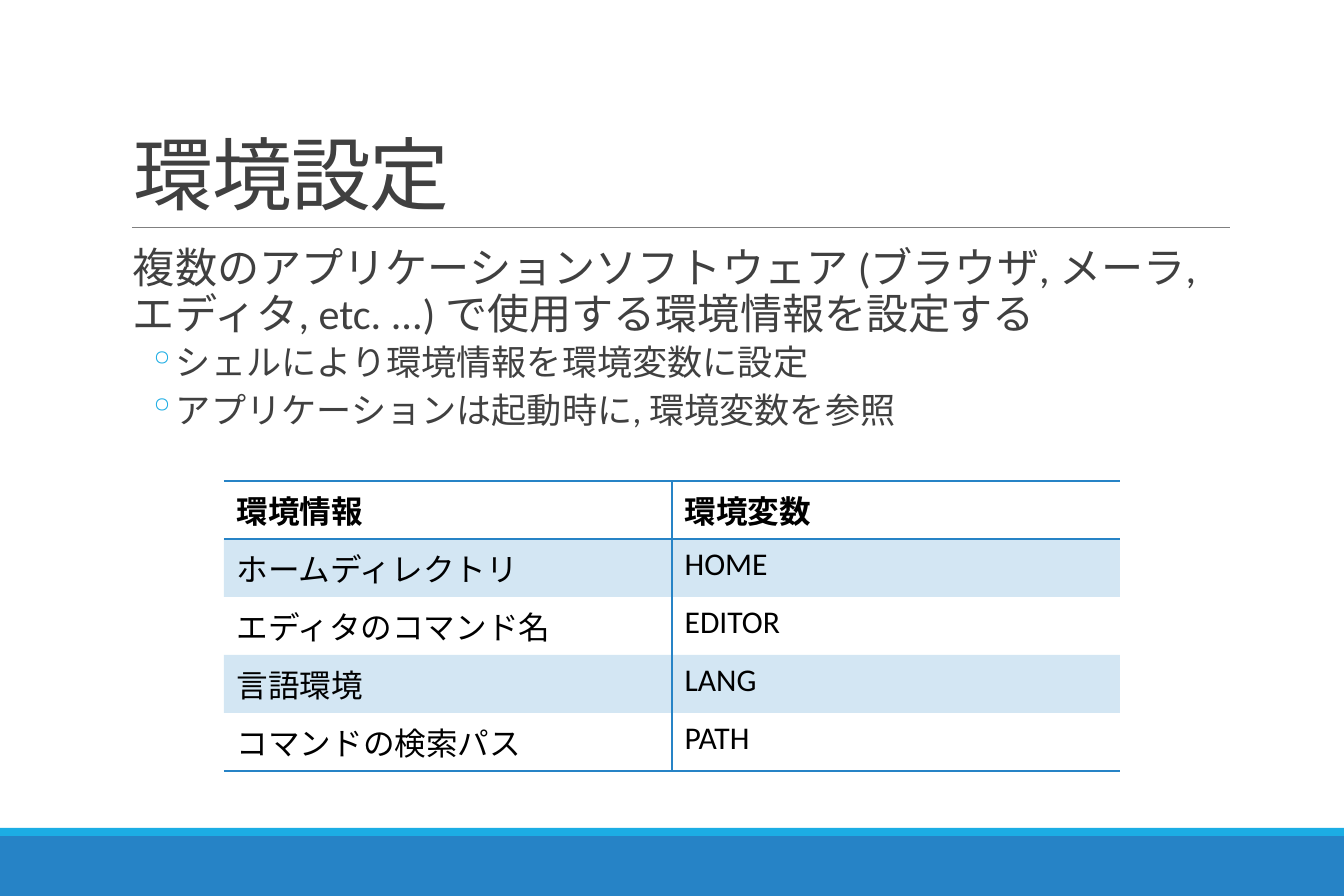
from lxml.etree import SubElement
from pptx import Presentation
from pptx.dml.color import RGBColor
from pptx.enum.lang import MSO_LANGUAGE_ID as Lang
from pptx.enum.shapes import MSO_CONNECTOR as Conn, MSO_SHAPE as Shape
from pptx.enum.text import MSO_ANCHOR as Anchor, MSO_AUTO_SIZE as Auto, PP_ALIGN as Align
from pptx.oxml.ns import qn
from pptx.util import Pt

PX = 7234  # EMU per px
WIDTH, HEIGHT = 1344, 896
FONT = "Calibri"
BLUE = RGBColor(0x26, 0x83, 0xC6)
CYAN = RGBColor(0x1C, 0xAD, 0xE4)
GRAY = RGBColor(0x80, 0x80, 0x80)
DARK = RGBColor(0x40, 0x40, 0x40)
BLACK = RGBColor(0, 0, 0)
NO_STYLE = "{2D5ABB26-0587-4C30-8999-92F81FD0307C}"

TITLE = "環境設定"
LEAD = ("複数のアプリケーションソフトウェア (ブラウザ, メーラ, エディタ, etc. ...) "
        "で使用する環境情報を設定する")
POINTS = ["シェルにより環境情報を環境変数に設定", "アプリケーションは起動時に, 環境変数を参照"]
ROWS = [
    ("環境情報", "環境変数"),
    ("ホームディレクトリ", "HOME"),
    ("エディタのコマンド名", "EDITOR"),
    ("言語環境", "LANG"),
    ("コマンドの検索パス", "PATH"),
]


def px(*nums):
    return [num * PX for num in nums]


def assign(item, values):
    for name, value in values.items():
        setattr(item, name, value)


def write(para, text, size, color, bold=False):
    run = para.add_run()
    run.text = text
    assign(run.font, {"name": FONT, "size": Pt(size), "bold": bold,
                      "language_id": Lang.JAPANESE})
    run.font.color.rgb = color
    return run


def add_bar(slide, top, height, color):
    bar = slide.shapes.add_shape(Shape.RECTANGLE, *px(0, top, WIDTH, height))
    bar.shadow.inherit = False
    bar.fill.solid()
    bar.fill.fore_color.rgb = color
    bar.line.fill.background()


def add_rule(slide, left, right, y):
    rule = slide.shapes.add_connector(Conn.STRAIGHT, *px(left, y, right, y))
    rule.line.color.rgb = GRAY
    rule.line.width = Pt(0.5)
    SubElement(rule.element.spPr, qn("a:effectLst"))


def set_title(slide, text):
    title = slide.shapes.title
    assign(title, dict(zip(("left", "top", "width", "height"), px(121, 38, 1109, 189))))
    frame = title.text_frame
    assign(frame, {"auto_size": Auto.NONE, "word_wrap": True, "vertical_anchor": Anchor.BOTTOM})
    para = frame.paragraphs[0]
    assign(para, {"alignment": Align.LEFT, "line_spacing": 0.85})
    run = write(para, text, 45.4, DARK)
    run.font._element.set("spc", "-50")


def indent(para, left, first=0, mark=None):
    props = para._p.get_or_add_pPr()
    props.set("marL", str(left * PX))
    props.set("indent", str(first * PX))
    if mark:
        tint = SubElement(props, qn("a:buClr"))
        SubElement(tint, qn("a:srgbClr"), val=str(CYAN))
        SubElement(props, qn("a:buChar"), char=mark)


def add_body(slide):
    box = slide.shapes.add_textbox(*px(121, 241, 1109, 526))
    frame = box.text_frame
    assign(frame, {"word_wrap": True, "margin_left": 0, "margin_right": 0})
    lead = frame.paragraphs[0]
    indent(lead, 12)
    assign(lead, {"line_spacing": 0.9, "space_after": Pt(1.9)})
    write(lead, LEAD, 24, DARK)
    for text in POINTS:
        para = frame.add_paragraph()
        indent(para, 51, -24, "◦")
        assign(para, {"level": 1, "line_spacing": 0.9,
                      "space_before": Pt(1.9), "space_after": Pt(3.8)})
        write(para, text, 20, DARK)


def add_edges(cell, sides):
    props = cell._tc.get_or_add_tcPr()
    for side in sides:
        edge = SubElement(props, qn("a:ln" + side), w=str(Pt(1)))
        fill = SubElement(edge, qn("a:solidFill"))
        SubElement(fill, qn("a:srgbClr"), val=str(BLUE))


def set_fill(cell, banded):
    if not banded:
        cell.fill.background()
        return
    cell.fill.solid()
    cell.fill.fore_color.rgb = BLUE
    tint = cell._tc.tcPr.find(".//" + qn("a:solidFill") + "/" + qn("a:srgbClr") + "[last()]")
    for tint in cell._tc.tcPr.findall(qn("a:solidFill") + "/" + qn("a:srgbClr")):
        SubElement(tint, qn("a:alpha"), val="20000")


def add_grid(slide):
    count = len(ROWS)
    frame = slide.shapes.add_table(count, 2, *px(224, 481, 896, 58 * count))
    table = frame.table
    table._tbl.tblPr.find(qn("a:tableStyleId")).text = NO_STYLE
    for i, row in enumerate(ROWS):
        # Lines above and below the header, and below the last row
        ends = "TB" if i == 0 else "B" if i == count - 1 else ""
        for j, text in enumerate(row):
            cell = table.cell(i, j)
            add_edges(cell, "RL"[j] + ends)
            set_fill(cell, i % 2 == 1)
            write(cell.text_frame.paragraphs[0], text, 18, BLACK, bold=i == 0)


def main():
    deck = Presentation()
    deck.slide_width, deck.slide_height = px(WIDTH, HEIGHT)
    slide = deck.slides.add_slide(deck.slide_layouts[5])
    # Footer bands and title rule
    add_bar(slide, 836, 60, BLUE)
    add_bar(slide, 828, 8, CYAN)
    add_rule(slide, 132, 1230, 227)
    # Content
    set_title(slide, TITLE)
    add_body(slide)
    add_grid(slide)
    deck.save("out.pptx")


if __name__ == "__main__":
    main()
